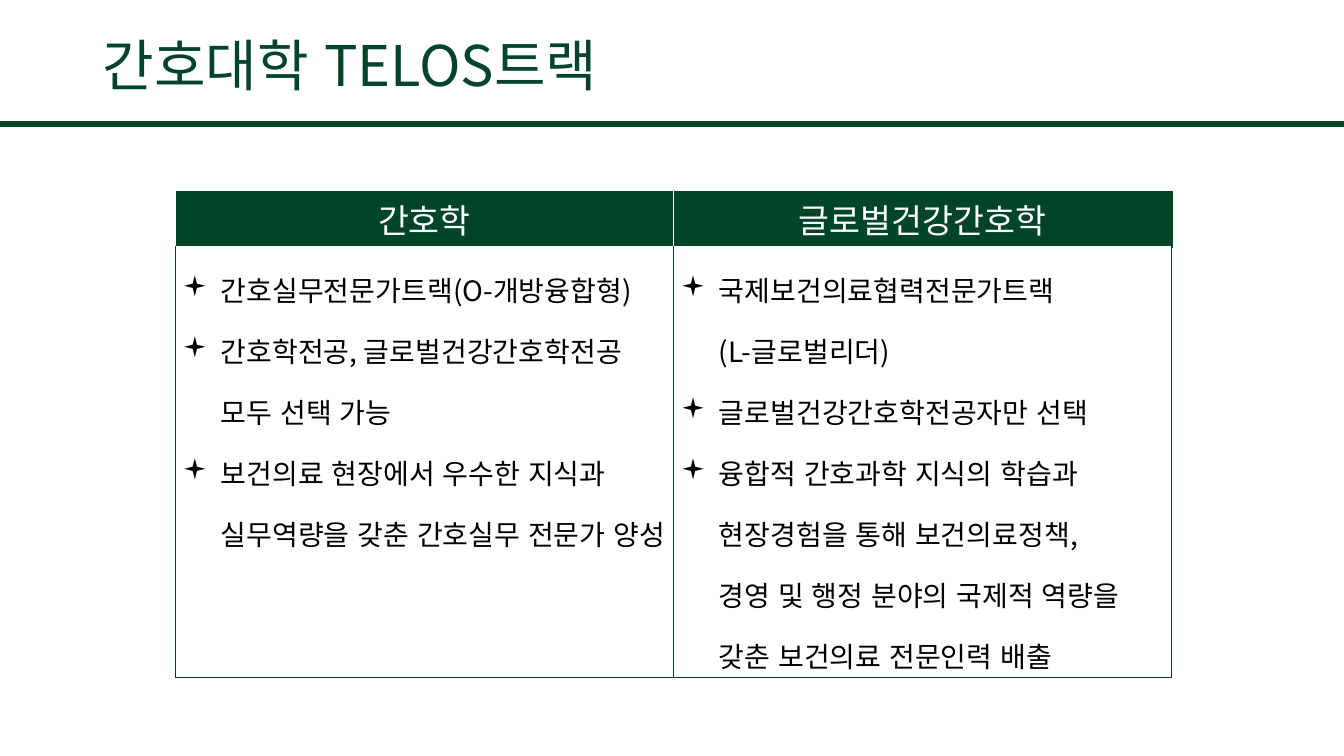
import pptx
import pptx.dml.color
import pptx.enum.lang
import pptx.enum.shapes
import pptx.enum.text
import pptx.oxml
import pptx.oxml.ns
import pptx.util
from pptx.util import Inches

TITLE = "간호대학 TELOS트랙"
TRACKS = {
    "간호학": [
        "간호실무전문가트랙(O-개방융합형)",
        "간호학전공, 글로벌건강간호학전공 모두 선택 가능",
        "보건의료 현장에서 우수한 지식과 실무역량을 갖춘 간호실무 전문가 양성",
    ],
    "글로벌건강간호학": [
        "국제보건의료협력전문가트랙\n(L-글로벌리더)",
        "글로벌건강간호학전공자만 선택",
        "융합적 간호과학 지식의 학습과 현장경험을 통해 보건의료정책, \n"
        "경영 및 행정 분야의 국제적 역량을\n갖춘 보건의료 전문인력 배출",
    ],
}
THEME = {
    "font": "Noto Sans CJK KR", "bullet_font": "Wingdings",
    "green": "004529", "white": "FFFFFF", "black": "000000",
    "title": 40, "header": 24, "body": 20,
    "thin": 1, "thick": 2.25, "rule": 4.5,
}
ALIGN = pptx.enum.text.PP_ALIGN
ANCHOR = pptx.enum.text.MSO_ANCHOR
SLIDE_WIDTH, SLIDE_HEIGHT = 13.33, 7.5
RULE_TOP = 1.23
TABLE_LEFT, TABLE_TOP = 1.74, 1.9
COLUMN_WIDTH = 4.94
ROW_HEIGHTS = (0.55, 4.27)
BULLET_INDENT = Inches(0.38)


def color(name):
    return pptx.dml.color.RGBColor.from_string(THEME[name])


def add_xml(parent, tag, content="", **attributes):
    values = " ".join(f'{key}="{value}"' for key, value in attributes.items())
    parent.append(pptx.oxml.parse_xml(
        f'<a:{tag} {pptx.oxml.ns.nsdecls("a")} {values}>{content}</a:{tag}>'))


def write(para, text, size, ink, **paragraph_format):
    para.text = text
    for name, value in paragraph_format.items():
        setattr(para, name, value)
    font_format = {
        "name": THEME["font"],
        "size": pptx.util.Pt(THEME[size]),
        "language_id": pptx.enum.lang.MSO_LANGUAGE_ID.KOREAN,
    }
    for span in para.runs:
        for name, value in font_format.items():
            setattr(span.font, name, value)
        span.font.color.rgb = color(ink)
        add_xml(span.font._element, "ea", typeface=THEME["font"])


def add_bullet(para):
    properties = para._p.get_or_add_pPr()
    properties.set("marL", str(BULLET_INDENT))
    properties.set("indent", str(-BULLET_INDENT))
    add_xml(properties, "buFont", typeface=THEME["bullet_font"])
    add_xml(properties, "buChar", char="▪")


def format_cell(cell, anchor, borders):
    cell_format = {
        "margin_left": Inches(0.07), "margin_right": Inches(0.07),
        "margin_top": Inches(0.02), "margin_bottom": Inches(0.02),
        "vertical_anchor": anchor,
    }
    for name, value in cell_format.items():
        setattr(cell, name, value)
    for side, (ink, weight) in zip("LRTB", borders):
        add_xml(cell._tc.get_or_add_tcPr(), f"ln{side}",
                f'<a:solidFill><a:srgbClr val="{THEME[ink]}"/></a:solidFill>',
                w=pptx.util.Pt(THEME[weight]))


def add_title(page):
    rule = page.shapes.add_connector(
        pptx.enum.shapes.MSO_CONNECTOR.STRAIGHT,
        0, Inches(RULE_TOP), Inches(SLIDE_WIDTH), Inches(RULE_TOP))
    rule.line.color.rgb = color("green")
    rule.line.width = pptx.util.Pt(THEME["rule"])
    add_xml(rule._element.spPr, "effectLst")
    box = page.shapes.add_textbox(
        Inches(0.92), Inches(0.16), Inches(11.5), Inches(1.03))
    box.text_frame.word_wrap = True
    box.text_frame.vertical_anchor = ANCHOR.MIDDLE
    write(box.text_frame.paragraphs[0], TITLE, "title", "green", line_spacing=0.9)


def add_tracks(page):
    table = page.shapes.add_table(
        len(ROW_HEIGHTS), len(TRACKS), Inches(TABLE_LEFT), Inches(TABLE_TOP),
        Inches(COLUMN_WIDTH * len(TRACKS)), Inches(sum(ROW_HEIGHTS))).table
    table.horz_banding = False
    table.first_row = False
    for row, height in zip(table.rows, ROW_HEIGHTS):
        row.height = Inches(height)
    green, white = ("green", "thin"), ("white", "thin")
    divider = ("white", "thick")
    for index, (track, points) in enumerate(TRACKS.items()):
        table.columns[index].width = Inches(COLUMN_WIDTH)
        header, body = table.cell(0, index), table.cell(1, index)
        last = index == len(TRACKS) - 1
        right = ("green", "thick") if last else white
        format_cell(header, ANCHOR.MIDDLE, (white, right, green, divider))
        header.fill.solid()
        header.fill.fore_color.rgb = color("green")
        write(header.text_frame.paragraphs[0], track, "header", "white",
              alignment=ALIGN.CENTER)
        format_cell(body, ANCHOR.TOP, (green, green, divider, green))
        body.fill.background()
        for number, point in enumerate(points):
            frame = body.text_frame
            para = frame.add_paragraph() if number else frame.paragraphs[0]
            add_bullet(para)
            write(para, point, "body", "black", line_spacing=1.5)


def main():
    deck = pptx.Presentation()
    deck.slide_width = Inches(SLIDE_WIDTH)
    deck.slide_height = Inches(SLIDE_HEIGHT)
    page = deck.slides.add_slide(deck.slide_layouts[6])
    add_title(page)
    add_tracks(page)
    deck.save("out.pptx")


if __name__ == "__main__":
    main()
